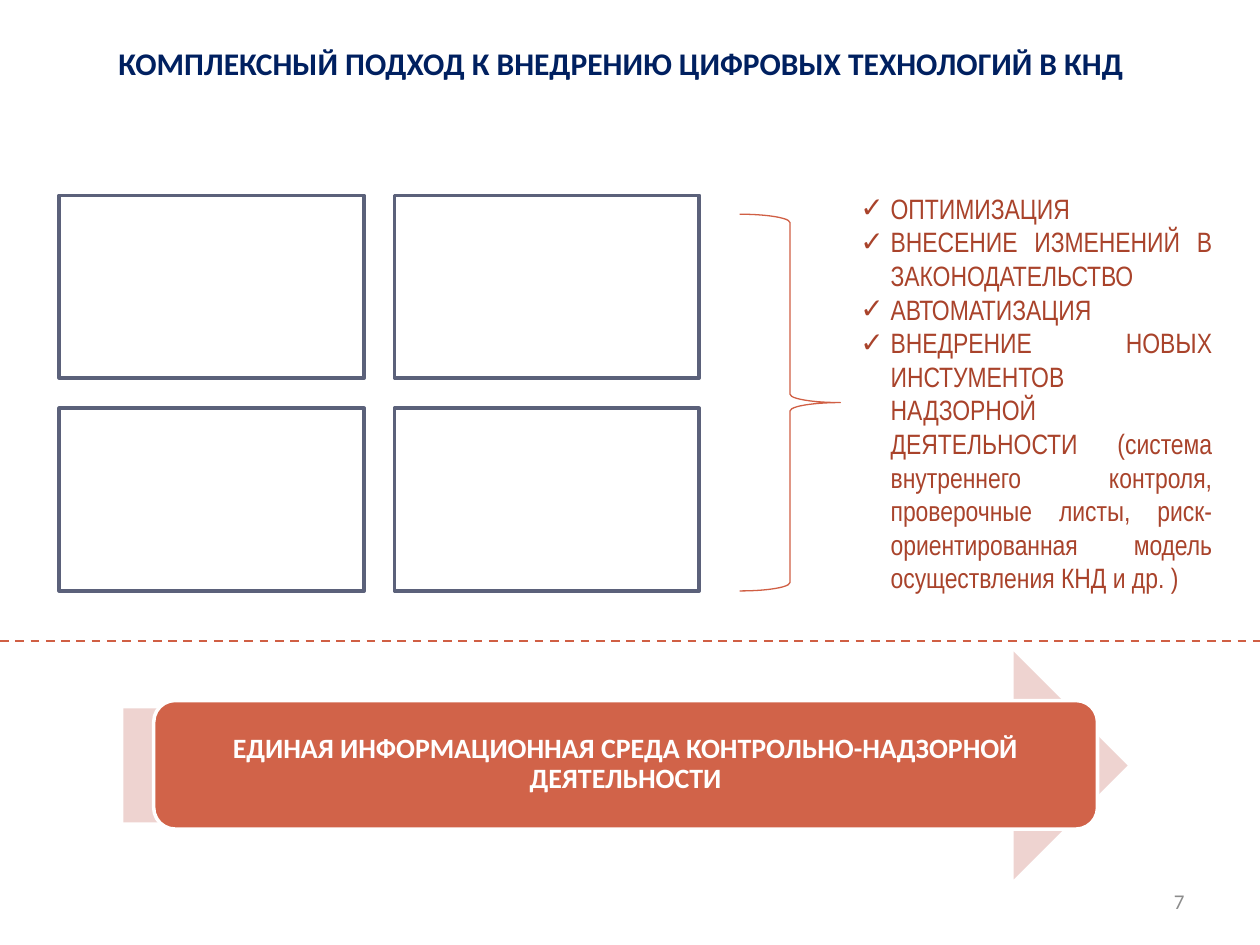
"""Slide on a joint approach to digital technology in state control."""
from lxml import etree
from pptx import Presentation
from pptx.dml.color import RGBColor
from pptx.enum.dml import MSO_LINE
from pptx.enum.shapes import MSO_CONNECTOR, MSO_SHAPE
from pptx.enum.text import MSO_ANCHOR, PP_ALIGN
from pptx.oxml.ns import qn
from pptx.util import Inches, Pt

RECT, ROUND = MSO_SHAPE.RECTANGLE, MSO_SHAPE.ROUNDED_RECTANGLE
BRACE, ARROW = MSO_SHAPE.RIGHT_BRACE, MSO_SHAPE.RIGHT_ARROW
LINE, DASH = MSO_CONNECTOR.STRAIGHT, MSO_LINE.DASH
TOP, MIDDLE = MSO_ANCHOR.TOP, MSO_ANCHOR.MIDDLE
CENTER, RIGHT, JUSTIFY = PP_ALIGN.CENTER, PP_ALIGN.RIGHT, PP_ALIGN.JUSTIFY

WHITE = RGBColor(0xFF, 0xFF, 0xFF)
NAVY = RGBColor(0x00, 0x20, 0x60)
SLATE = RGBColor(0x5B, 0x61, 0x7A)
CORAL = RGBColor(0xD0, 0x5F, 0x44)
BRICK = RGBColor(0xD1, 0x63, 0x49)
RUST = RGBColor(0xA9, 0x43, 0x2B)
PINK = RGBColor(0xEE, 0xD3, 0xD0)
GREY = RGBColor(0x8C, 0x8C, 0x8C)

TITLE = "КОМПЛЕКСНЫЙ ПОДХОД К ВНЕДРЕНИЮ ЦИФРОВЫХ ТЕХНОЛОГИЙ В КНД"
STEPS = [
    "ОПТИМИЗАЦИЯ",
    "ВНЕСЕНИЕ ИЗМЕНЕНИЙ В ЗАКОНОДАТЕЛЬСТВО",
    "АВТОМАТИЗАЦИЯ",
    "ВНЕДРЕНИЕ НОВЫХ ИНСТУМЕНТОВ НАДЗОРНОЙ ДЕЯТЕЛЬНОСТИ "
    "(система внутреннего контроля, проверочные листы, "
    "риск-ориентированная модель осуществления КНД и др. )",
]
GOAL = "ЕДИНАЯ ИНФОРМАЦИОННАЯ СРЕДА КОНТРОЛЬНО-НАДЗОРНОЙ ДЕЯТЕЛЬНОСТИ"
PAGE = "7"

LEFT, HIGH, WIDE, TALL = 0.47, 1.55, 2.42, 1.45
GAP = 0.24


def add_form(slide, kind, box, fill=None, line=None, width=2):
    form = slide.shapes.add_shape(kind, *map(Inches, box))
    form.shadow.inherit = False
    if fill is None:
        form.fill.background()
    else:
        form.fill.solid()
        form.fill.fore_color.rgb = fill
    if line is None:
        form.line.fill.background()
    else:
        form.line.color.rgb = line
        form.line.width = Pt(width)
    return form


def write(form, lines, size, color, align, anchor=MIDDLE, font="Calibri", bold=False):
    frame = form.text_frame
    frame.word_wrap = True
    frame.vertical_anchor = anchor
    frame.text = "\n".join(lines)
    for para in frame.paragraphs:
        para.alignment = align
        para.font.size = Pt(size)
        para.font.name = font
        para.font.bold = bold
        para.font.color.rgb = color
    return frame


def add_text(slide, box, *args, **style):
    return write(slide.shapes.add_textbox(*map(Inches, box)), *args, **style)


def add_tick(para, indent):
    props = para._p.get_or_add_pPr()
    props.set("marL", str(Inches(indent)))
    props.set("indent", str(-Inches(indent)))
    etree.SubElement(props, qn("a:buFont")).set("typeface", "Arial")
    etree.SubElement(props, qn("a:buChar")).set("char", "✓")


def main():
    deck = Presentation()
    deck.slide_width, deck.slide_height = Inches(10), Inches(7.5)
    slide = deck.slides.add_slide(deck.slide_layouts[6])

    title = add_text(slide, (0.43, 0, 9, 1.25), [TITLE], 18, NAVY, CENTER, bold=True)
    title.margin_bottom = Inches(0.3)

    for row in range(2):
        for col in range(2):
            left, top = LEFT + col * (WIDE + GAP), HIGH + row * (TALL + GAP)
            add_form(slide, RECT, (left, top, WIDE, TALL), WHITE, SLATE)
    add_form(slide, BRACE, (5.87, 1.7, 0.8, 2.99), line=CORAL, width=0.75)

    steps = add_text(slide, (6.73, 1.47, 2.99, 3.33), STEPS, 16, RUST, JUSTIFY,
                     anchor=TOP, font="Arial Narrow")
    for para in steps.paragraphs:
        add_tick(para, GAP)

    rule = slide.shapes.add_connector(LINE, 0, Inches(5.09), Inches(10), Inches(5.09))
    rule.line.color.rgb = CORAL
    rule.line.width = Pt(1.25)
    rule.line.dash_style = DASH
    etree.SubElement(rule._element.spPr, qn("a:effectLst"))

    add_form(slide, ARROW, (0.98, 5.17, 7.97, 1.81), PINK)
    goal = add_form(slide, ROUND, (1.22, 5.56, 7.49, 1.02), BRICK, WHITE)
    frame = write(goal, [GOAL], 16, WHITE, CENTER, bold=True)
    frame.paragraphs[0].line_spacing = 0.9

    add_text(slide, (7.17, 6.95, 2.33, 0.4), [PAGE], 12, GREY, RIGHT)
    deck.save("out.pptx")


if __name__ == "__main__":
    main()
